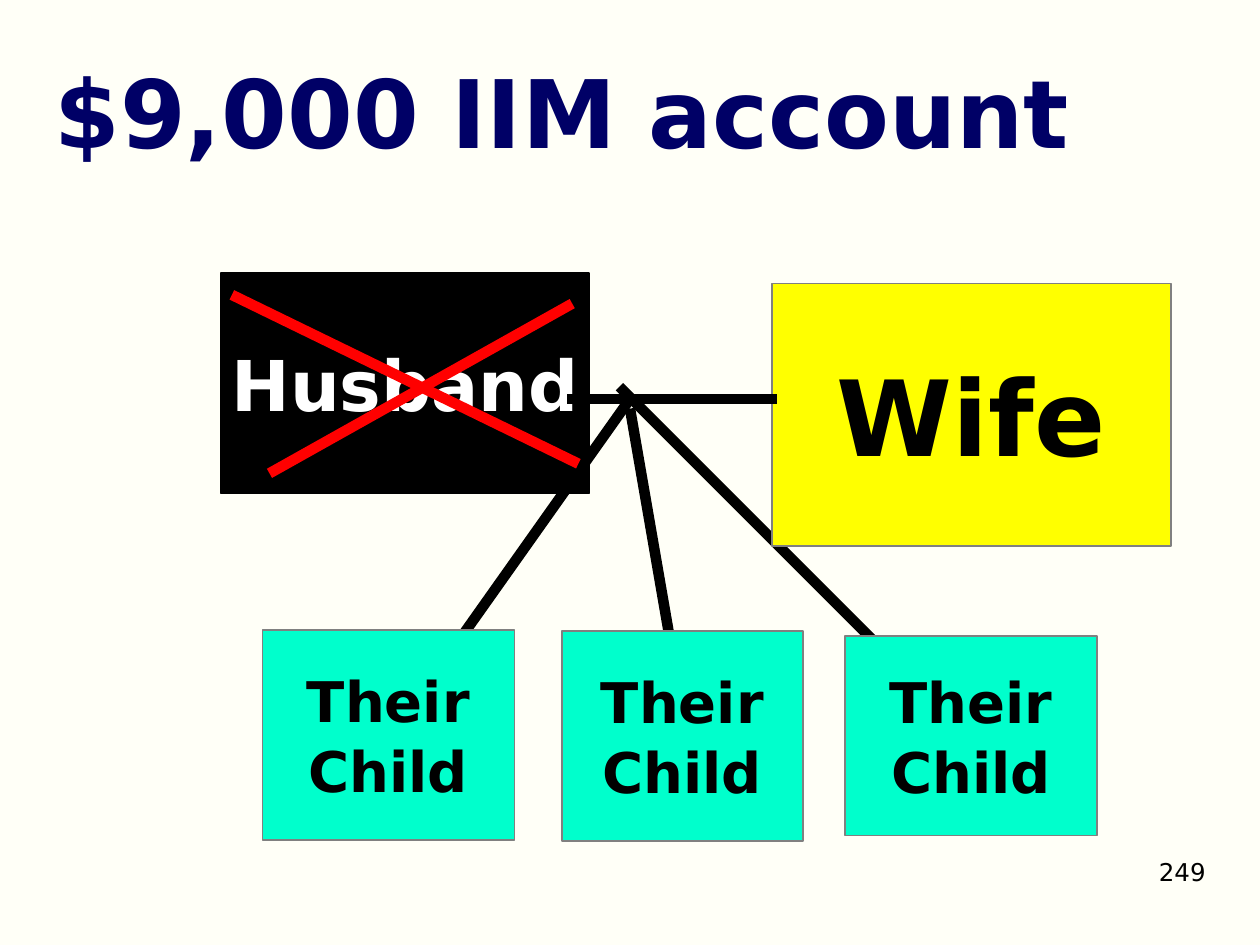
from lxml.etree import SubElement
from pptx import Presentation
from pptx.dml.color import RGBColor
from pptx.enum.shapes import MSO_CONNECTOR, MSO_SHAPE
from pptx.enum.text import MSO_ANCHOR, MSO_AUTO_SIZE, PP_ALIGN
from pptx.oxml.ns import qn
from pptx.util import Pt

FONT = "DejaVu Sans"
COLORS = {
    "background": "FFFFF7",
    "title": "000066",
    "black": "000000",
    "white": "FFFFFF",
    "wife": "FFFF00",
    "child": "00FFCC",
    "border": "808080",
    "cross": "FF0000",
}


def color(name):
    return RGBColor.from_string(COLORS[name])


def format_paragraph(paragraph, size, color_name, alignment, bold=True):
    paragraph.alignment = alignment
    paragraph.font.name = FONT
    paragraph.font.size = Pt(size)
    paragraph.font.bold = bold
    paragraph.font.color.rgb = color(color_name)


def place(shape, left, top, width, height):
    shape.left, shape.top = Pt(left), Pt(top)
    shape.width, shape.height = Pt(width), Pt(height)


def add_title(slide, text):
    title = slide.shapes.title
    place(title, 24, 18, 660, 90)
    frame = title.text_frame
    frame.text = text
    frame.auto_size = MSO_AUTO_SIZE.NONE
    frame.vertical_anchor = MSO_ANCHOR.MIDDLE
    format_paragraph(frame.paragraphs[0], 54, "title", PP_ALIGN.LEFT)


def add_person(slide, text, bounds, size, fill, border="border", text_color="black"):
    shape = slide.shapes.add_shape(MSO_SHAPE.RECTANGLE, *map(Pt, bounds))
    shape.shadow.inherit = False
    shape.fill.solid()
    shape.fill.fore_color.rgb = color(fill)
    shape.line.color.rgb = color(border)
    shape.line.width = Pt(1)
    frame = shape.text_frame
    frame.text = text
    frame.word_wrap = False
    frame.vertical_anchor = MSO_ANCHOR.MIDDLE
    for index, paragraph in enumerate(frame.paragraphs):
        format_paragraph(paragraph, size, text_color, PP_ALIGN.CENTER)
        paragraph.space_before = Pt(1.5 if index else 0)


def add_line(slide, start, end, color_name="black"):
    line = slide.shapes.add_connector(MSO_CONNECTOR.STRAIGHT, *map(Pt, (*start, *end)))
    line.line.color.rgb = color(color_name)
    line.line.width = Pt(6)
    SubElement(line._element.spPr, qn("a:effectLst"))


def add_page_number(slide, text):
    box = slide.shapes.add_textbox(Pt(528), Pt(486), Pt(168), Pt(37.5))
    box.text_frame.word_wrap = True
    box.text_frame.text = text
    format_paragraph(box.text_frame.paragraphs[0], 14, "black", PP_ALIGN.RIGHT, bold=False)


def main():
    presentation = Presentation()
    presentation.slide_width, presentation.slide_height = Pt(720), Pt(540)
    slide = presentation.slides.add_slide(presentation.slide_layouts[5])
    slide.background.fill.solid()
    slide.background.fill.fore_color.rgb = color("background")

    add_title(slide, "$9,000 IIM account")
    descent_lines = [
        ((360, 233.5), (384, 372)),
        ((360, 228), (258, 372)),
        ((354, 221), (512, 379)),
    ]
    for start, end in descent_lines:
        add_line(slide, start, end)

    add_page_number(slide, "249")
    add_person(slide, "Wife", (441, 162, 228, 150), 60, "wife")
    child_bounds = [
        (150, 360, 144, 120),
        (321, 360.5, 138, 120),
        (483, 363.5, 144, 114),
    ]
    for bounds in child_bounds:
        add_person(slide, "Their\nChild", bounds, 32, "child")
    add_person(slide, "Husband", (126.5, 156, 210, 126), 40, "black", "black", "white")

    add_line(slide, (324, 228), (444, 228))
    add_line(slide, (330.5, 265), (132.5, 168.5), "cross")
    add_line(slide, (154, 270.5), (327, 173.5), "cross")

    presentation.save("out.pptx")


if __name__ == "__main__":
    main()
